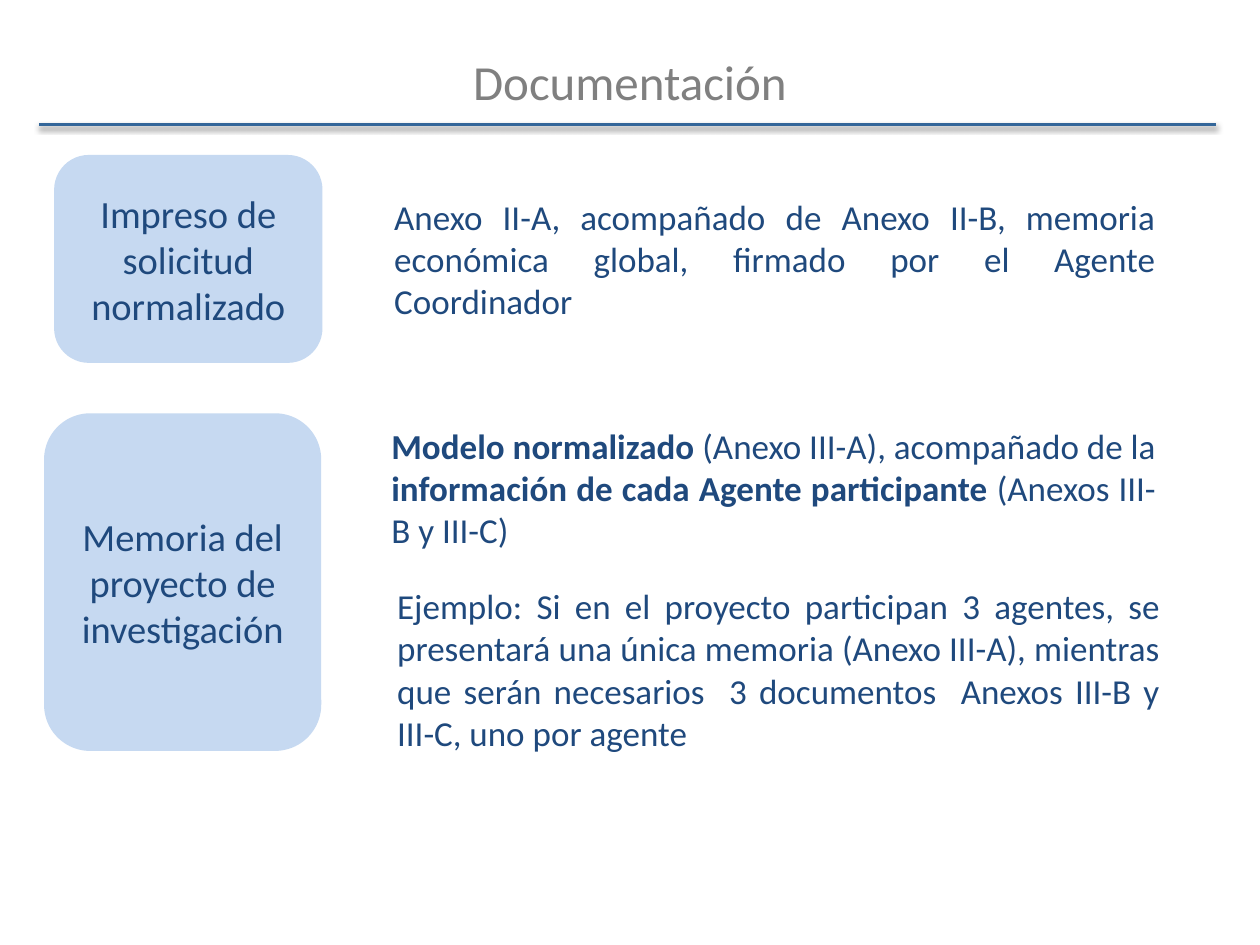
from dataclasses import dataclass

from lxml.etree import SubElement
from pptx import Presentation
from pptx.dml.color import RGBColor
from pptx.enum.shapes import MSO_CONNECTOR, MSO_SHAPE
from pptx.enum.text import MSO_ANCHOR, PP_ALIGN
from pptx.oxml.ns import qn
from pptx.util import Inches, Pt


@dataclass(frozen=True)
class Theme:
    font: str = "Calibri"
    navy: str = "1F497D"
    gray: str = "808080"
    rule: str = "336699"
    pale: str = "C6D9F1"
    white: str = "FFFFFF"
    title: int = 28
    label: int = 22
    body: int = 20


theme = Theme()


def write(shape, runs, size, color=theme.navy, align=PP_ALIGN.CENTER):
    """Fill a shape with one paragraph of (text, bold) runs."""
    frame = shape.text_frame
    frame.word_wrap = True
    frame.vertical_anchor = MSO_ANCHOR.MIDDLE
    para = frame.paragraphs[0]
    para.alignment = align
    for text, bold in runs:
        run = para.add_run()
        run.text = text
        run.font.name = theme.font
        run.font.size = Pt(size)
        run.font.bold = bold
        run.font.color.rgb = RGBColor.from_string(color)


def add_card(box, fill, runs, **style):
    card = slide.shapes.add_shape(
        MSO_SHAPE.ROUNDED_RECTANGLE, *[Inches(n) for n in box])
    card.shadow.inherit = False
    card.fill.solid()
    card.fill.fore_color.rgb = RGBColor.from_string(fill)
    card.line.fill.background()
    write(card, runs, **style)


deck = Presentation()
deck.slide_width, deck.slide_height = Inches(10), Inches(7.5)
slide = deck.slides.add_slide(deck.slide_layouts[6])

# Rule under the title, with a soft shadow
rule = slide.shapes.add_connector(
    MSO_CONNECTOR.STRAIGHT, Inches(0.31), Inches(0.99), Inches(9.65), Inches(0.99))
rule.line.color.rgb = RGBColor.from_string(theme.rule)
rule.line.width = Pt(2)
effects = SubElement(rule._element.spPr, qn("a:effectLst"))
shadow = SubElement(effects, qn("a:outerShdw"), blurRad=str(Pt(3.1)),
                    dist=str(Pt(1.6)), dir="5400000", rotWithShape="0")
black = SubElement(shadow, qn("a:srgbClr"), val="000000")
SubElement(black, qn("a:alpha"), val="38000")

title = slide.shapes.add_textbox(Inches(0.5), Inches(0.3), Inches(9), Inches(0.69))
write(title, [("Documentación", False)], theme.title, color=theme.gray)

labels = [
    ((0.43, 1.23, 2.13, 1.65), "Impreso de solicitud normalizado"),
    ((0.35, 3.28, 2.2, 2.68), "Memoria del proyecto de investigación"),
]
for box, text in labels:
    add_card(box, theme.pale, [(text, False)], size=theme.label)

details = [
    ((2.95, 1.23, 6.4, 1.65), [
        ("Anexo II-A, acompañado de Anexo II-B, memoria económica global, "
         "firmado por el Agente Coordinador", False)]),
    ((2.95, 3.28, 6.38, 1.18), [
        ("Modelo normalizado ", True),
        ("(Anexo III-A), acompañado de la ", False),
        ("información de cada Agente participante ", True),
        ("(Anexos III-B y III-C)", False)]),
    ((2.99, 4.66, 6.38, 1.3), [
        ("Ejemplo: Si en el proyecto participan 3 agentes, se presentará una "
         "única memoria (Anexo III-A), mientras que serán necesarios  "
         "3 documentos  Anexos III-B y III-C, uno por agente", False)]),
]
for box, runs in details:
    add_card(box, theme.white, runs, size=theme.body, align=PP_ALIGN.JUSTIFY)

deck.save("out.pptx")
